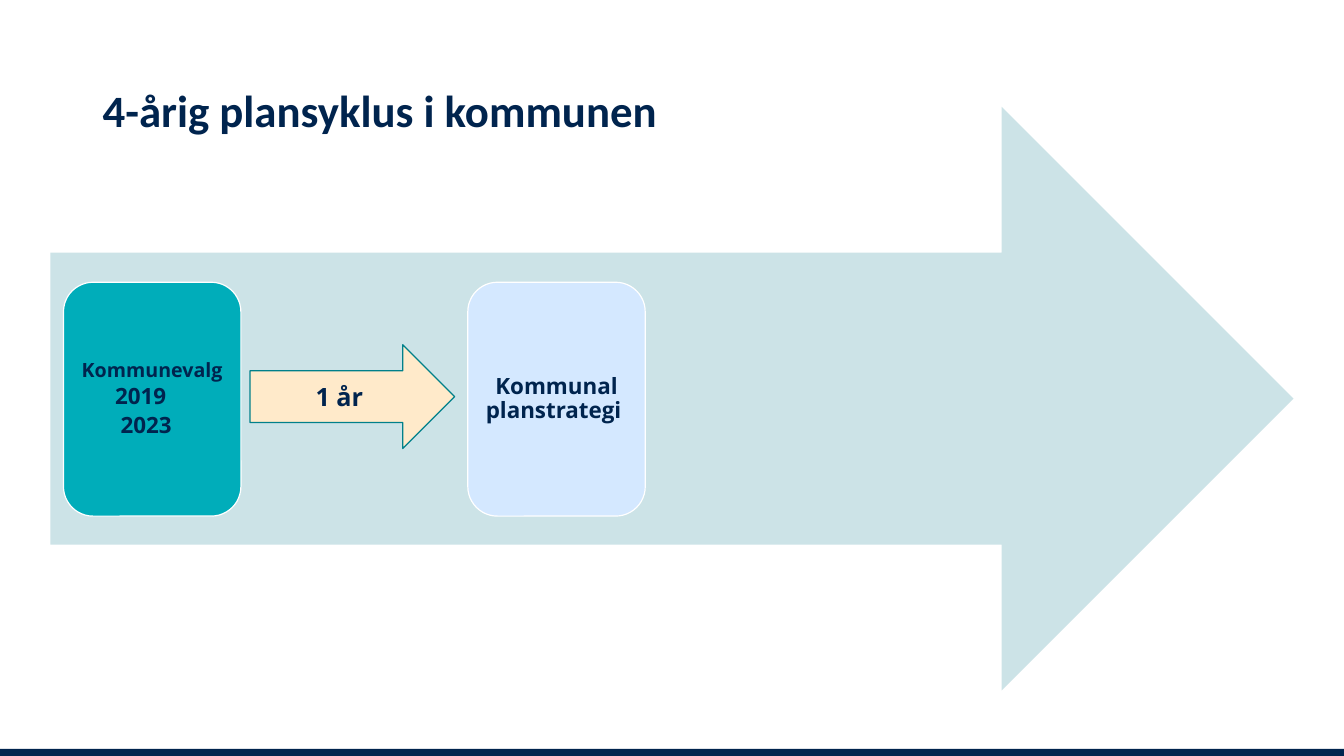
from dataclasses import dataclass

from pptx import Presentation
from pptx.dml.color import RGBColor
from pptx.enum.shapes import MSO_SHAPE as Shape
from pptx.enum.text import MSO_ANCHOR as Anchor, PP_ALIGN as Align
from pptx.shapes.autoshape import Shape as AutoShape
from pptx.slide import Slide
from pptx.text.text import _Paragraph as Paragraph
from pptx.util import Inches, Pt

COLORS = {
    "navy": "00244E",
    "pale_teal": "CCE3E7",
    "teal": "00ADBA",
    "dark_teal": "00808A",
    "light_blue": "D4E8FF",
    "cream": "FFEACA",
    "white": "FFFFFF",
}


@dataclass(frozen=True)
class Line:
    text: str
    size: float
    right_indent: float = 0


@dataclass(frozen=True)
class Stage:
    left: float
    fill: str
    lines: tuple[Line, ...]


STAGE_TOP, STAGE_WIDTH, STAGE_HEIGHT = 2.8, 1.76, 2.32
STAGES = (
    Stage(0.63, "teal", (
        Line("Kommunevalg", 14),
        Line("2019", 16, right_indent=0.23),
        Line("2023", 16, right_indent=0.12),
    )),
    Stage(4.64, "light_blue", (Line("Kommunal planstrategi ", 16),)),
)


def color(name: str) -> RGBColor:
    return RGBColor.from_string(COLORS[name])


def add_block(page: Slide, kind: Shape, left: float, top: float, width: float,
              height: float, fill: str, outline: str | None = None) -> AutoShape:
    block = page.shapes.add_shape(
        kind, Inches(left), Inches(top), Inches(width), Inches(height))
    block.shadow.inherit = False
    block.fill.solid()
    block.fill.fore_color.rgb = color(fill)
    if outline:
        block.line.color.rgb = color(outline)
        block.line.width = Pt(0.85)
    else:
        block.line.fill.background()
    return block


def write(para: Paragraph, text: str, size: float, font_name: str = "Open Sans",
          align: Align = Align.CENTER) -> None:
    para.text = text
    para.alignment = align
    for span in para.runs:
        span.font.name = font_name
        span.font.size = Pt(size)
        span.font.bold = True
        span.font.color.rgb = color("navy")


def add_title(page: Slide, text: str) -> None:
    box = page.shapes.add_textbox(Inches(0.92), Inches(0.4), Inches(11.5), Inches(1.45))
    frame = box.text_frame
    frame.word_wrap = True
    frame.vertical_anchor = Anchor.MIDDLE
    para = frame.paragraphs[0]
    write(para, text, 32, "Calibri", Align.LEFT)
    para.line_spacing = 0.9


def add_stage(page: Slide, stage: Stage) -> None:
    box = add_block(page, Shape.ROUNDED_RECTANGLE, stage.left, STAGE_TOP,
                    STAGE_WIDTH, STAGE_HEIGHT, stage.fill, "white")
    frame = box.text_frame
    frame.word_wrap = True
    frame.vertical_anchor = Anchor.MIDDLE
    frame.margin_left = frame.margin_right = Inches(0.07)
    frame.margin_top = frame.margin_bottom = Inches(0.07)
    for index, line in enumerate(stage.lines):
        para = frame.add_paragraph() if index else frame.paragraphs[0]
        write(para, line.text, line.size)
        para.line_spacing = 0.9
        para.space_after = Pt(line.size * 0.2)
        if line.right_indent:
            para._p.get_or_add_pPr().set("marR", str(Inches(line.right_indent)))


def main() -> None:
    deck = Presentation()
    deck.slide_width, deck.slide_height = Inches(13.33), Inches(7.5)
    page = deck.slides.add_slide(deck.slide_layouts[6])

    add_block(page, Shape.RECTANGLE, 0, 7.43, 13.33, 0.07, "navy")
    add_title(page, "4-årig plansyklus i kommunen")
    add_block(page, Shape.RIGHT_ARROW, 0.5, 1.06, 12.33, 5.79, "pale_teal")
    for stage in STAGES:
        add_stage(page, stage)

    duration = add_block(page, Shape.RIGHT_ARROW, 2.48, 3.42, 2.03, 1.03,
                         "cream", "dark_teal")
    duration.text_frame.word_wrap = True
    duration.text_frame.vertical_anchor = Anchor.MIDDLE
    write(duration.text_frame.paragraphs[0], "1 år", 18)

    deck.save("out.pptx")


if __name__ == "__main__":
    main()
